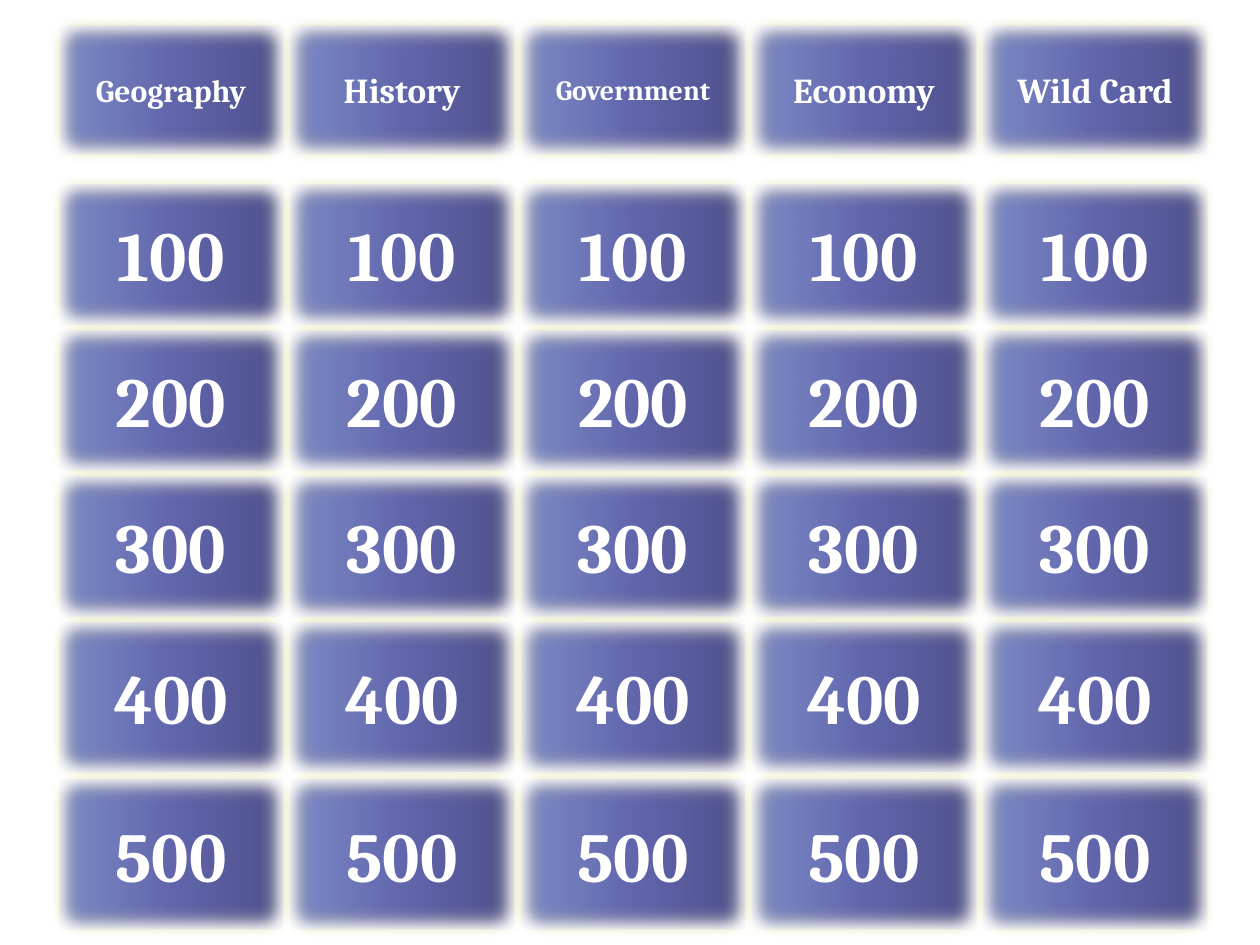
"""Build a quiz board with five categories and five rows of point values."""
from copy import deepcopy

from pptx import Presentation
from pptx.dml.color import RGBColor
from pptx.enum.shapes import MSO_SHAPE
from pptx.enum.text import MSO_ANCHOR, PP_ALIGN
from pptx.oxml import parse_xml
from pptx.oxml.ns import nsdecls, qn
from pptx.util import Pt

GRADIENT = [(0, "7F8EC8"), (0.5, "6266AE"), (1, "4E508A")]
CATEGORIES = [("Geography", 18), ("History", 20), ("Government", 16),
              ("Economy", 20), ("Wild Card", 20)]
VALUE_ROWS = [(103, 84), (186.5, 84), (270, 84), (353.5, 89.5), (443, 90)]
BOARD_LEFT, TILE_WIDTH = 31.7, 132
SHADOW = (f'<a:outerShdw {nsdecls("a")} blurRad="{Pt(5)}" dist="0" dir="0">'
          '<a:srgbClr val="000000"><a:alpha val="40000"/></a:srgbClr></a:outerShdw>')
SOFT_EDGE = f'<a:softEdge {nsdecls("a")} rad="{Pt(10)}"/>'


def color(value):
    """Return the colour for a hex string."""
    return RGBColor.from_string(value)


def add_tile(slide, column, top, height, text, size, wrap):
    """Add one soft-edged tile with its label."""
    shape = slide.shapes.add_shape(
        MSO_SHAPE.ACTION_BUTTON_CUSTOM, Pt(BOARD_LEFT + column * TILE_WIDTH),
        Pt(top), Pt(TILE_WIDTH), Pt(height))
    shape.fill.gradient()
    shape.fill.gradient_angle = 0
    properties = shape._element.spPr
    stop_list = properties.find(qn("a:gradFill")).find(qn("a:gsLst"))
    stop_list.insert(1, deepcopy(stop_list[0]))
    for stop, (position, value) in zip(shape.fill.gradient_stops, GRADIENT):
        stop.position = position
        stop.color.rgb = color(value)
    shape.line.color.rgb = color("FFFF00")
    shape.line.width = Pt(4.5)
    shape.shadow.inherit = False
    effects = properties.find(qn("a:effectLst"))
    effects.append(parse_xml(SHADOW))
    effects.append(parse_xml(SOFT_EDGE))

    frame = shape.text_frame
    frame.word_wrap = wrap
    frame.vertical_anchor = MSO_ANCHOR.MIDDLE
    paragraph = frame.paragraphs[0]
    paragraph.text = text
    paragraph.alignment = PP_ALIGN.CENTER
    paragraph.font.name = "Cambria"
    paragraph.font.size = Pt(size)
    paragraph.font.bold = True
    paragraph.font.color.rgb = color("FFFFFF")


presentation = Presentation()
presentation.slide_width = Pt(720)
presentation.slide_height = Pt(540)
slide = presentation.slides.add_slide(presentation.slide_layouts[6])

for column, (category, size) in enumerate(CATEGORIES):
    add_tile(slide, column, 12.2, 78, category, size, category != "Wild Card")
    for row, (top, height) in enumerate(VALUE_ROWS, start=1):
        add_tile(slide, column, top, height, str(row * 100), 40, False)

presentation.save("out.pptx")
